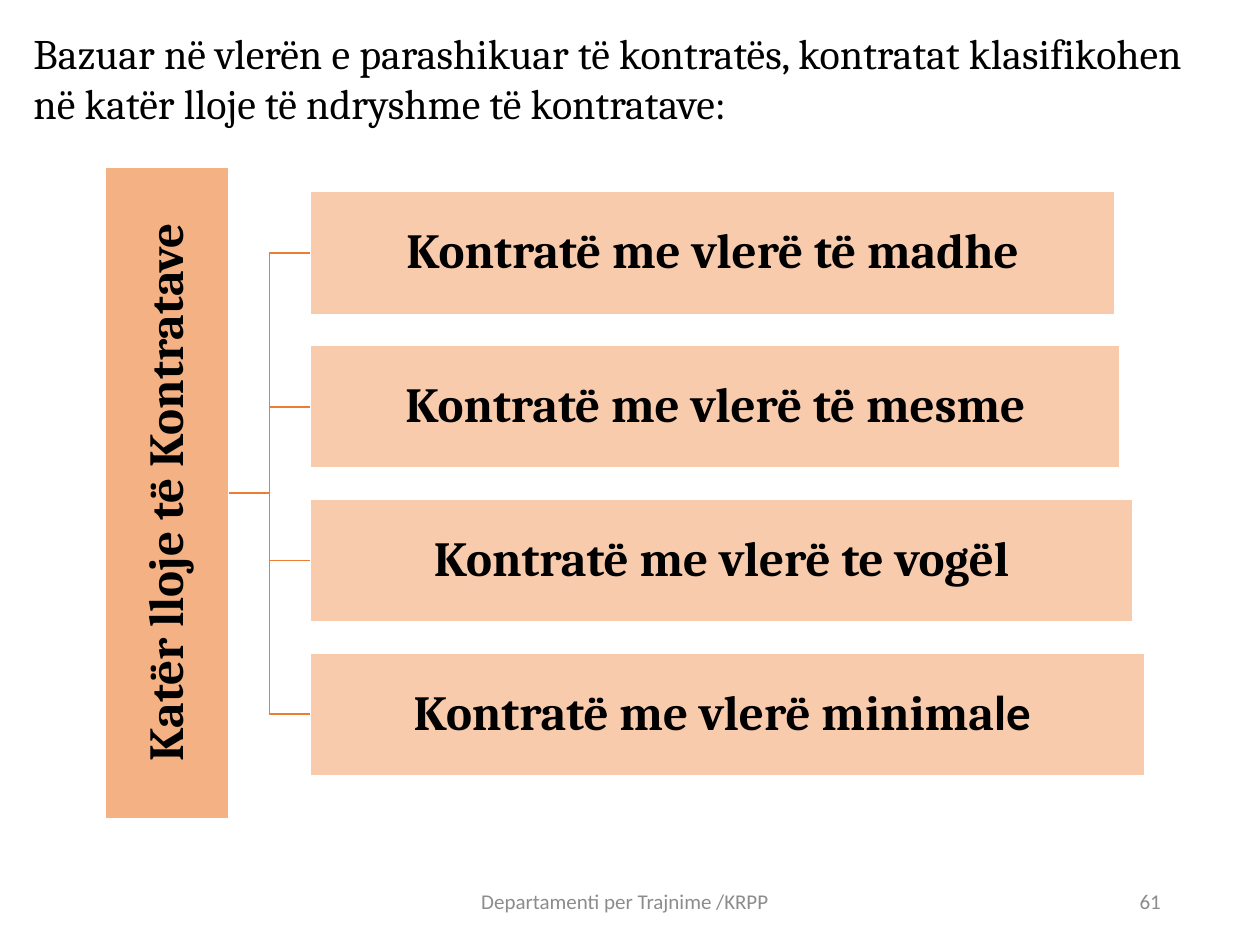
from dataclasses import dataclass

from lxml import etree
from pptx import Presentation
from pptx.dml.color import RGBColor
from pptx.enum import shapes, text
from pptx.oxml import ns
from pptx.util import Cm, Pt


@dataclass(frozen=True)
class Theme:
    serif: str = "Cambria"
    sans: str = "Calibri"
    ink: str = "000000"
    muted: str = "8C8C8C"
    trunk: str = "F4B183"
    branch: str = "F8CBAD"
    border: str = "FFFFFF"
    link: str = "ED7D31"
    intro_size: int = 24
    label_size: int = 28
    footer_size: int = 12


@dataclass(frozen=True)
class Box:
    left: float
    top: float
    width: float
    height: float

    def lengths(self) -> tuple:
        return Cm(self.left), Cm(self.top), Cm(self.width), Cm(self.height)


@dataclass(frozen=True)
class ContractType:
    label: str
    width: float
    sans_ending: str = ""


THEME = Theme()
CONTRACT_TYPES = (
    ContractType("Kontratë me vlerë të madhe", 16.21),
    ContractType("Kontratë me vlerë të mesme", 16.32),
    ContractType("Kontratë me vlerë te vogël", 16.57),
    ContractType("Kontratë me vlerë minima", 16.82, "le "),
)
BAR = 2.48
BRANCH_LEFT, BRANCH_TOP, BRANCH_PITCH = 6.26, 3.86, 3.1


def apply(target, values: dict) -> None:
    for attribute, value in values.items():
        setattr(target, attribute, value)


def add_run(paragraph, words: str, font: str, size: int, color: str, bold: bool = False) -> None:
    run = paragraph.add_run()
    run.text = words
    apply(run.font, {"name": font, "size": Pt(size), "bold": bold})
    run.font.color.rgb = RGBColor.from_string(color)


def add_bar(slide, box: Box, fill: str, label: str, sans_ending: str = ""):
    bar = slide.shapes.add_shape(shapes.MSO_SHAPE.RECTANGLE, *box.lengths())
    bar.shadow.inherit = False
    bar.fill.solid()
    bar.fill.fore_color.rgb = RGBColor.from_string(fill)
    bar.line.color.rgb = RGBColor.from_string(THEME.border)
    bar.line.width = Pt(1)
    margins = ("margin_left", "margin_top", "margin_right", "margin_bottom")
    apply(bar.text_frame, dict.fromkeys(margins, Cm(0.05)))
    apply(bar.text_frame, {"word_wrap": True, "vertical_anchor": text.MSO_ANCHOR.MIDDLE})
    paragraph = bar.text_frame.paragraphs[0]
    apply(paragraph, {"alignment": text.PP_ALIGN.CENTER, "line_spacing": 0.9})
    add_run(paragraph, label, THEME.serif, THEME.label_size, THEME.ink, True)
    if sans_ending:
        add_run(paragraph, sans_ending, THEME.sans, THEME.label_size, THEME.ink, True)
    return bar


def add_link(slide):
    link = slide.shapes.add_connector(shapes.MSO_CONNECTOR.ELBOW, 0, 0, 0, 0)
    link.line.color.rgb = RGBColor.from_string(THEME.link)
    link.line.width = Pt(1)
    etree.SubElement(link._element.spPr, ns.qn("a:effectLst"))
    return link


def add_footer(slide, box: Box, words: str, alignment) -> None:
    frame = slide.shapes.add_textbox(*box.lengths()).text_frame
    apply(frame, {"word_wrap": True, "vertical_anchor": text.MSO_ANCHOR.MIDDLE})
    frame.paragraphs[0].alignment = alignment
    add_run(frame.paragraphs[0], words, THEME.sans, THEME.footer_size, THEME.muted)


def main() -> None:
    deck = Presentation()
    deck.slide_width, deck.slide_height = Cm(25.4), Cm(19.05)
    slide = deck.slides.add_slide(deck.slide_layouts.get_by_name("Title Only"))

    # Introductory sentence
    intro = slide.shapes.title
    intro.left, intro.top, intro.width, intro.height = Box(0.42, 0.42, 24.56, 2.6).lengths()
    apply(intro.text_frame, {
        "word_wrap": True,
        "auto_size": text.MSO_AUTO_SIZE.NONE,
        "vertical_anchor": text.MSO_ANCHOR.TOP,
    })
    sentence = intro.text_frame.paragraphs[0]
    sentence.alignment = text.PP_ALIGN.LEFT
    add_run(
        sentence,
        "Bazuar në vlerën e parashikuar të kontratës, kontratat klasifikohen "
        "në katër lloje të ndryshme të kontratave:",
        THEME.serif, THEME.intro_size, THEME.ink,
    )

    # Links lie behind the bars they join
    links = [add_link(slide) for _ in CONTRACT_TYPES]

    # Upright trunk, read from bottom to top
    trunk = add_bar(slide, Box(2.13, 3.37, BAR, 13.13), THEME.trunk, "Katër lloje të Kontratave")
    trunk.text_frame._txBody.bodyPr.set("vert", "vert270")

    # One branch for each contract type
    for row, (contract, link) in enumerate(zip(CONTRACT_TYPES, links)):
        box = Box(BRANCH_LEFT, BRANCH_TOP + row * BRANCH_PITCH, contract.width, BAR)
        branch = add_bar(slide, box, THEME.branch, contract.label, contract.sans_ending)
        link.begin_connect(trunk, 3)
        link.end_connect(branch, 1)

    # Footer
    add_footer(slide, Box(8.31, 17.65, 8.58, 1.02), "Departamenti per Trajnime /KRPP",
               text.PP_ALIGN.CENTER)
    add_footer(slide, Box(17.93, 17.65, 5.72, 1.02), "61", text.PP_ALIGN.RIGHT)

    deck.save("out.pptx")


if __name__ == "__main__":
    main()
